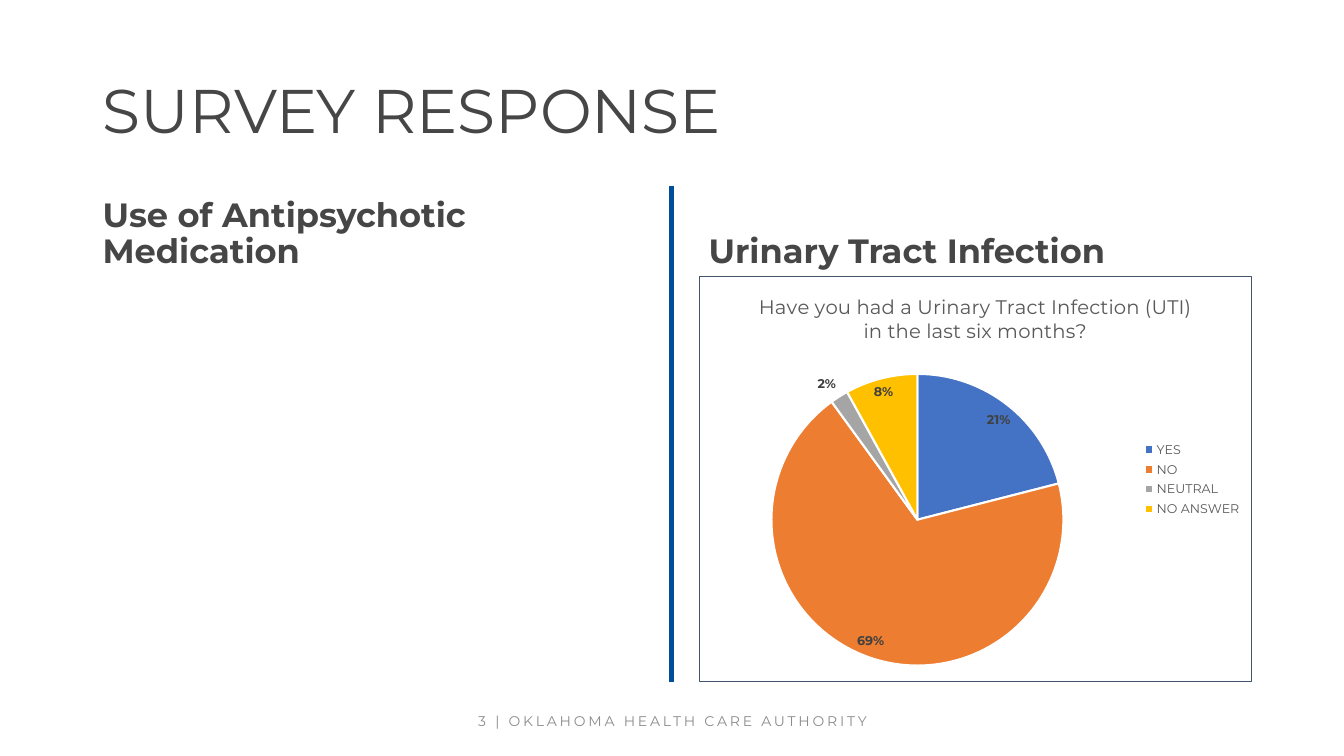
from dataclasses import dataclass

import pptx
import pptx.chart.chart
import pptx.chart.data
import pptx.dml.color
import pptx.enum.chart
import pptx.enum.dml
import pptx.enum.shapes
import pptx.enum.text
import pptx.oxml
import pptx.oxml.ns
import pptx.slide
import pptx.text.text
import pptx.util
from pptx.util import Inches


@dataclass(frozen=True)
class Theme:
    font: str = "Montserrat"
    ink: str = "464646"
    footer_ink: str = "8C8C8C"
    divider: str = "004E9A"
    chart_ink: str = "595959"
    label_ink: str = "404040"
    white: str = "FFFFFF"
    chart_border: str = "44546A"
    title_size: float = 44
    heading_size: float = 24
    chart_title_size: float = 14
    footer_size: float = 10
    chart_size: float = 9


@dataclass(frozen=True)
class Box:
    left: float
    top: float
    width: float
    height: float

    def emu(self) -> tuple[int, int, int, int]:
        return (Inches(self.left), Inches(self.top),
                Inches(self.width), Inches(self.height))


@dataclass(frozen=True)
class Heading:
    text: str
    box: Box


@dataclass(frozen=True)
class Answer:
    name: str
    percent: int
    color: str


THEME = Theme()
TITLE_BOX = Box(0.92, 0.4, 11.5, 1.45)
FOOTER_BOX = Box(0.92, 6.95, 11.5, 0.4)
CHART_BOX = Box(6.93, 2.74, 5.49, 4.03)
HEADINGS = [
    Heading("Use of Antipsychotic Medication", Box(0.92, 1.84, 5.47, 0.9)),
    Heading("Urinary Tract Infection", Box(6.93, 1.84, 5.49, 0.9)),
]
ANSWERS = [
    Answer("YES", 21, "4472C4"),
    Answer("NO", 69, "ED7D31"),
    Answer("NEUTRAL", 2, "A5A5A5"),
    Answer("NO ANSWER", 8, "FFC000"),
]


def rgb(color: str) -> pptx.dml.color.RGBColor:
    return pptx.dml.color.RGBColor.from_string(color)


def style_font(font: pptx.text.text.Font, size: float, color: str,
               bold: bool = False) -> None:
    font.name = THEME.font
    font.size = pptx.util.Pt(size)
    font.bold = bold
    font.color.rgb = rgb(color)


def fill_frame(frame: pptx.text.text.TextFrame, text: str, size: float,
               color: str, anchor: pptx.enum.text.MSO_ANCHOR,
               align: pptx.enum.text.PP_ALIGN = pptx.enum.text.PP_ALIGN.LEFT,
               bold: bool = False) -> pptx.text.text.TextFrame:
    frame.text = text
    frame.word_wrap = True
    frame.auto_size = pptx.enum.text.MSO_AUTO_SIZE.NONE
    frame.vertical_anchor = anchor
    frame.paragraphs[0].alignment = align
    style_font(frame.paragraphs[0].runs[0].font, size, color, bold)
    return frame


def add_divider(slide: pptx.slide.Slide) -> None:
    divider = slide.shapes.add_connector(
        pptx.enum.shapes.MSO_CONNECTOR.STRAIGHT,
        Inches(6.66), Inches(6.77), Inches(6.66), Inches(1.85))
    divider.line.color.rgb = rgb(THEME.divider)
    divider.line.width = pptx.util.Pt(3)
    divider._element.spPr.append(pptx.oxml.parse_xml(
        f'<a:effectLst {pptx.oxml.ns.nsdecls("a")}/>'))


def add_footer(slide: pptx.slide.Slide) -> None:
    footer = slide.shapes.add_textbox(*FOOTER_BOX.emu())
    frame = fill_frame(footer.text_frame, "3 | OKLAHOMA HEALTH CARE AUTHORITY",
                       THEME.footer_size, THEME.footer_ink,
                       pptx.enum.text.MSO_ANCHOR.MIDDLE,
                       pptx.enum.text.PP_ALIGN.CENTER)
    # Letter spacing of 2 pt
    frame.paragraphs[0].runs[0]._r.get_or_add_rPr().set("spc", "200")


def add_title(slide: pptx.slide.Slide) -> None:
    title = slide.shapes.title
    title.left, title.top, title.width, title.height = TITLE_BOX.emu()
    frame = fill_frame(title.text_frame, "SURVEY RESPONSE", THEME.title_size,
                       THEME.ink, pptx.enum.text.MSO_ANCHOR.MIDDLE)
    frame.paragraphs[0].line_spacing = 0.9


def add_heading(slide: pptx.slide.Slide, heading: Heading) -> None:
    heading_box = slide.shapes.add_textbox(*heading.box.emu())
    frame = fill_frame(heading_box.text_frame, heading.text,
                       THEME.heading_size, THEME.ink,
                       pptx.enum.text.MSO_ANCHOR.BOTTOM, bold=True)
    frame.paragraphs[0].line_spacing = 0.9
    frame.paragraphs[0].space_before = pptx.util.Pt(10)


def frame_chart(chart: pptx.chart.chart.Chart) -> None:
    """Give the chart area its fill and border, and place the pie."""
    chart._chartSpace.chart.addnext(pptx.oxml.parse_xml(
        f'<c:spPr {pptx.oxml.ns.nsdecls("c", "a")}>'
        f'<a:solidFill><a:srgbClr val="{THEME.white}"/></a:solidFill>'
        f'<a:ln w="{pptx.util.Pt(0.75)}"><a:solidFill>'
        f'<a:srgbClr val="{THEME.chart_border}"/></a:solidFill></a:ln></c:spPr>'))
    plot_area = chart._chartSpace.chart.plotArea
    for layout in plot_area.findall(pptx.oxml.ns.qn("c:layout")):
        plot_area.remove(layout)
    sides = {"x": 0.13, "y": 0.24, "w": 0.53, "h": 0.72}
    places = "".join(f'<c:{side} val="{share}"/>' for side, share in sides.items())
    plot_area.insert(0, pptx.oxml.parse_xml(
        f'<c:layout {pptx.oxml.ns.nsdecls("c")}><c:manualLayout>'
        '<c:layoutTarget val="inner"/><c:xMode val="edge"/><c:yMode val="edge"/>'
        f'{places}</c:manualLayout></c:layout>'))


def add_uti_chart(slide: pptx.slide.Slide) -> None:
    survey = pptx.chart.data.CategoryChartData()
    survey.categories = [answer.name for answer in ANSWERS]
    survey.add_series("Series 1", [answer.percent for answer in ANSWERS])
    chart = slide.shapes.add_chart(
        pptx.enum.chart.XL_CHART_TYPE.PIE, *CHART_BOX.emu(), survey).chart
    style_font(chart.font, THEME.chart_size, THEME.chart_ink)

    # Question and legend
    chart.has_title = True
    question = chart.chart_title.text_frame
    question.text = ("Have you had a Urinary Tract Infection (UTI) "
                     "in the last six months?")
    style_font(question.paragraphs[0].runs[0].font,
               THEME.chart_title_size, THEME.chart_ink)
    chart.has_legend = True
    chart.legend.position = pptx.enum.chart.XL_LEGEND_POSITION.RIGHT
    chart.legend.include_in_layout = False
    style_font(chart.legend.font, THEME.chart_size, THEME.chart_ink)

    # Slices
    pie = chart.plots[0]
    pie.vary_by_categories = True
    for index, answer in enumerate(ANSWERS):
        pie_slice = pie.series[0].points[index].format
        pie_slice.fill.solid()
        pie_slice.fill.fore_color.rgb = rgb(answer.color)
        pie_slice.line.color.rgb = rgb(THEME.white)
        pie_slice.line.width = pptx.util.Pt(1.5)

    # Percentages
    labels = pie.series[0].data_labels
    labels.show_percentage = True
    labels.show_value = False
    labels.number_format = "0%"
    labels.number_format_is_linked = False
    labels.position = pptx.enum.chart.XL_LABEL_POSITION.BEST_FIT
    style_font(labels.font, THEME.chart_size, THEME.label_ink, bold=True)
    frame_chart(chart)


def main() -> None:
    deck = pptx.Presentation()
    deck.slide_width, deck.slide_height = Inches(13.33), Inches(7.5)
    slide = deck.slides.add_slide(deck.slide_layouts.get_by_name("Title Only"))
    add_divider(slide)
    add_footer(slide)
    add_title(slide)
    for heading in HEADINGS:
        add_heading(slide, heading)
    add_uti_chart(slide)
    deck.save("out.pptx")


if __name__ == "__main__":
    main()
